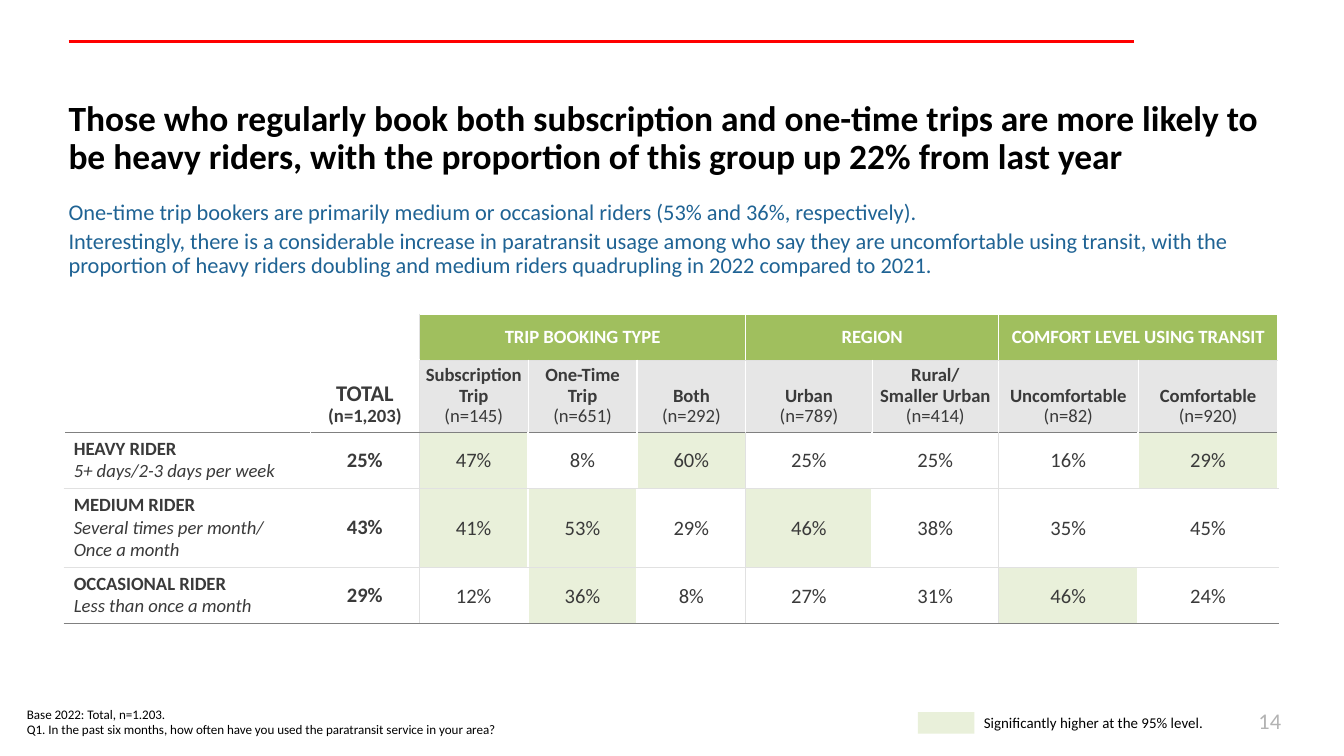
from lxml.etree import SubElement
from pptx import Presentation
from pptx.dml.color import RGBColor
from pptx.enum.shapes import MSO_CONNECTOR, MSO_SHAPE
from pptx.enum.text import MSO_ANCHOR, MSO_AUTO_SIZE, PP_ALIGN
from pptx.oxml.ns import qn
from pptx.util import Inches, Pt

FONT = "Calibri"
BLACK, WHITE, DARK, BLUE = "000000", "FFFFFF", "3A3A3A", "1F6394"
GREEN, MINT, GREY = "A0BF5E", "E9F0DA", "E6E6E6"
PALE, RULE, RED, FAINT = "E1E1E1", "808080", "FF0000", "B3B3B3"

TITLE = ("Those who regularly book both subscription and one-time trips are more "
         "likely to be heavy riders, with the proportion of this group up 22% from last year")
POINTS = [
    "One-time trip bookers are primarily medium or occasional riders (53% and 36%, respectively).",
    "Interestingly, there is a considerable increase in paratransit usage among who say they are "
    "uncomfortable using transit, with the proportion of heavy riders doubling and medium riders "
    "quadrupling in 2022 compared to 2021.",
]
NOTES = [
    "Base 2022: Total, n=1.203.",
    "Q1. In the past six months, how often have you used the paratransit service in your area?",
]
GROUPS = [("TRIP BOOKING TYPE", 3), ("REGION", 2), ("COMFORT LEVEL USING TRANSIT", 2)]
HEADS = [
    ("TOTAL", "(n=1,203)"),
    ("Subscription Trip", "(n=145)"),
    ("One-Time\nTrip", "(n=651)"),
    ("Both", "(n=292)"),
    ("Urban", "(n=789)"),
    ("Rural/\nSmaller Urban", "(n=414)"),
    ("Uncomfortable", "(n=82)"),
    ("Comfortable", "(n=920)"),
]
RIDERS = [
    ("HEAVY RIDER", "5+ days/2-3 days per week", [25, 47, 8, 60, 25, 25, 16, 29], {1, 3, 7}),
    ("MEDIUM RIDER", "Several times per month/\nOnce a month",
     [43, 41, 53, 29, 46, 38, 35, 45], {1, 2, 4}),
    ("OCCASIONAL RIDER", "Less than once a month", [29, 12, 36, 8, 27, 31, 46, 24], {2, 6}),
]
WIDTHS = [1.83] + [0.81] * 4 + [0.94] * 2 + [1.04] * 2
HEIGHTS = [0.34, 0.53, 0.42, 0.58, 0.42]
SLIM = (0.07, 0.04, 0.07, 0.04)
TIGHT = (0.01, 0.01, 0.01, 0)


def tint(text):
    return RGBColor.from_string(text)


def write(frame, lines, size, color, align=PP_ALIGN.LEFT, space=None, gap=None):
    for i, (text, style) in enumerate(lines):
        para = frame.paragraphs[0] if i == 0 else frame.add_paragraph()
        para.alignment = align
        para.line_spacing = space
        para.space_before = Pt(gap if gap and i else 0)
        for j, part in enumerate(text.split("\n")):
            if j:
                para.add_line_break()
            run = para.add_run()
            run.text = part
            font = run.font
            font.name = FONT
            font.size = Pt(style.get("size", size))
            font.bold = style.get("bold", False)
            font.italic = style.get("slant", False)
            font.color.rgb = tint(color)


def place(shape, box):
    shape.left, shape.top, shape.width, shape.height = map(Inches, box)


def inset(thing, sides):
    (thing.margin_left, thing.margin_top,
     thing.margin_right, thing.margin_bottom) = map(Inches, sides)


def label(slide, box, lines, size, color, align=PP_ALIGN.LEFT, sides=SLIM):
    frame = slide.shapes.add_textbox(*map(Inches, box)).text_frame
    frame.word_wrap = True
    frame.vertical_anchor = MSO_ANCHOR.MIDDLE
    inset(frame, sides)
    write(frame, [(line, {}) for line in lines], size, color, align)


def upright(row, edge):
    if edge == 2:
        return PALE, 0.75
    if row < 2:
        return WHITE, 0.75
    return (PALE, 0.5) if edge in (5, 7) else (WHITE, 1)


def level(edge, col):
    if edge == 0 or (edge == 1 and col < 2):
        return WHITE, 1
    return (RULE, 0.5) if edge in (2, 5) else (PALE, 0.5)


def frame_cell(cell, row, col, span=1):
    edges = {"L": upright(row, col), "R": upright(row, col + span),
             "T": level(row, col), "B": level(row + 1, col)}
    props = cell._tc.get_or_add_tcPr()
    for side, (color, width) in edges.items():
        line = SubElement(props, qn("a:ln" + side), w=str(Pt(width)))
        SubElement(SubElement(line, qn("a:solidFill")), qn("a:srgbClr"), val=color)


def fill_cell(cell, lines, size, color, back, sides, anchor,
              align=PP_ALIGN.CENTER, space=None):
    if back:
        cell.fill.solid()
        cell.fill.fore_color.rgb = tint(back)
    else:
        cell.fill.background()
    inset(cell, sides)
    cell.vertical_anchor = anchor
    write(cell.text_frame, lines, size, color, align, space)


def add_grid(slide):
    grid = slide.shapes.add_table(
        len(HEIGHTS), len(WIDTHS), Inches(0.48), Inches(2.34),
        Inches(sum(WIDTHS)), Inches(sum(HEIGHTS))).table
    grid.first_row = grid.horz_banding = False
    for col, width in zip(grid.columns, WIDTHS):
        col.width = Inches(width)
    for row, height in zip(grid.rows, HEIGHTS):
        row.height = Inches(height)

    spans, col = {}, 2
    for name, span in GROUPS:
        spans[col] = span
        grid.cell(0, col).merge(grid.cell(0, col + span - 1))
        col += span
    for r in range(len(HEIGHTS)):
        for c in range(len(WIDTHS)):
            frame_cell(grid.cell(r, c), r, c, spans.get(c, 1) if r == 0 else 1)

    for r, c in ((0, 0), (0, 1), (1, 0)):
        fill_cell(grid.cell(r, c), [], 10, DARK, None, (0, 0, 0, 0), MSO_ANCHOR.MIDDLE)
    for c, (name, span) in zip(spans, GROUPS):
        fill_cell(grid.cell(0, c), [(name, {"bold": True})], 10, WHITE, GREEN,
                  SLIM, MSO_ANCHOR.MIDDLE)
    for c, (name, base) in enumerate(HEADS, 1):
        total = c == 1
        lines = [(name, {"bold": True, "size": 12 if total else 10}),
                 (base, {"bold": total})]
        fill_cell(grid.cell(1, c), lines, 10, DARK, None if total else GREY,
                  SLIM if total else (0, 0.04, 0, 0.04), MSO_ANCHOR.BOTTOM, space=0.9)
    for r, (name, often, shares, high) in enumerate(RIDERS, 2):
        fill_cell(grid.cell(r, 0), [(name, {"bold": True}), (often, {"slant": True})],
                  10, DARK, None, (0.07, 0.04, 0, 0.04), MSO_ANCHOR.TOP, PP_ALIGN.LEFT)
        for i, share in enumerate(shares):
            fill_cell(grid.cell(r, i + 1), [(f"{share}%", {"bold": i == 0})], 11, DARK,
                      MINT if i in high else None, TIGHT if i else SLIM, MSO_ANCHOR.MIDDLE)


def main():
    deck = Presentation()
    deck.slide_width = Inches(10)
    deck.slide_height = Inches(10) * 9 // 16
    slide = deck.slides.add_slide(deck.slide_layouts[1])

    bar = slide.shapes.add_connector(
        MSO_CONNECTOR.STRAIGHT, Inches(0.51), Inches(0.31), Inches(8.44), Inches(0.31))
    bar.line.color.rgb = tint(RED)
    bar.line.width = Pt(1.5)
    SubElement(bar._element.spPr, qn("a:effectLst"))

    title, body = slide.shapes.title, slide.placeholders[1]
    place(title, (0.41, 0.7, 9.22, 1.02))
    place(body, (0.41, 1.45, 9.22, 0.69))
    for shape in (title, body):
        shape.text_frame.vertical_anchor = MSO_ANCHOR.TOP
        shape.text_frame.auto_size = MSO_AUTO_SIZE.NONE
    write(title.text_frame, [(TITLE, {"bold": True})], 19, BLACK, space=0.9)
    write(body.text_frame, [(point, {}) for point in POINTS], 12, BLUE, space=0.9, gap=2.4)
    for para in body.text_frame.paragraphs:
        props = para._p.get_or_add_pPr()
        props.set("marL", "0")
        props.set("indent", "0")
        SubElement(props, qn("a:buNone"))

    add_grid(slide)
    label(slide, (8.44, 5.21, 1.19, 0.3), ["14"], 12, FAINT, PP_ALIGN.RIGHT,
          (0.1, 0.05, 0.1, 0.05))
    label(slide, (0.13, 5.23, 6.35, 0.28), NOTES, 7, BLACK)

    key = slide.shapes.add_shape(
        MSO_SHAPE.RECTANGLE, *map(Inches, (6.83, 5.3, 0.42, 0.16)))
    key.shadow.inherit = False
    key.fill.solid()
    key.fill.fore_color.rgb = tint(MINT)
    key.line.fill.background()
    label(slide, (7.25, 5.27, 1.81, 0.21), ["Significantly higher at the 95% level."], 8, BLACK)
    deck.save("out.pptx")


if __name__ == "__main__":
    main()
